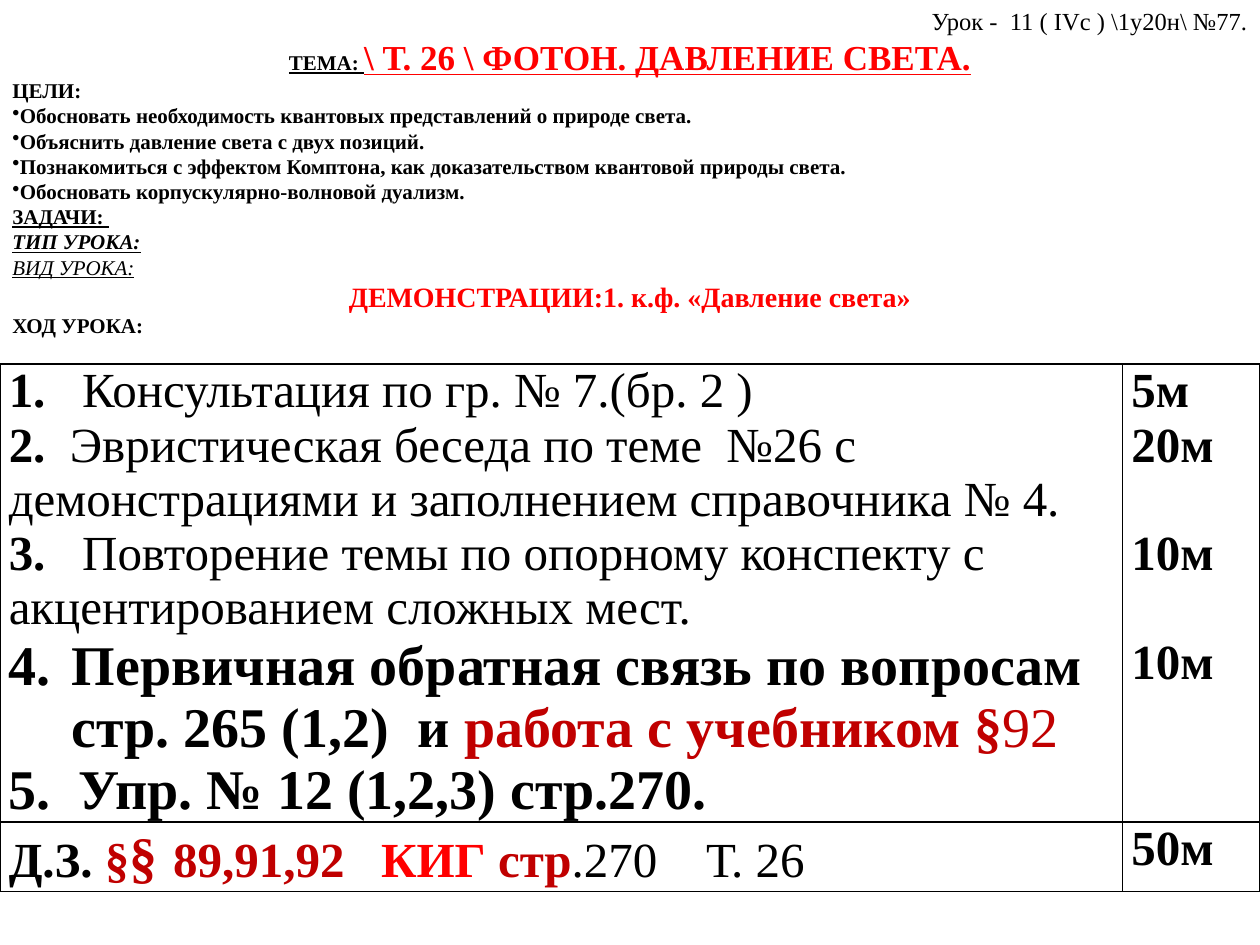
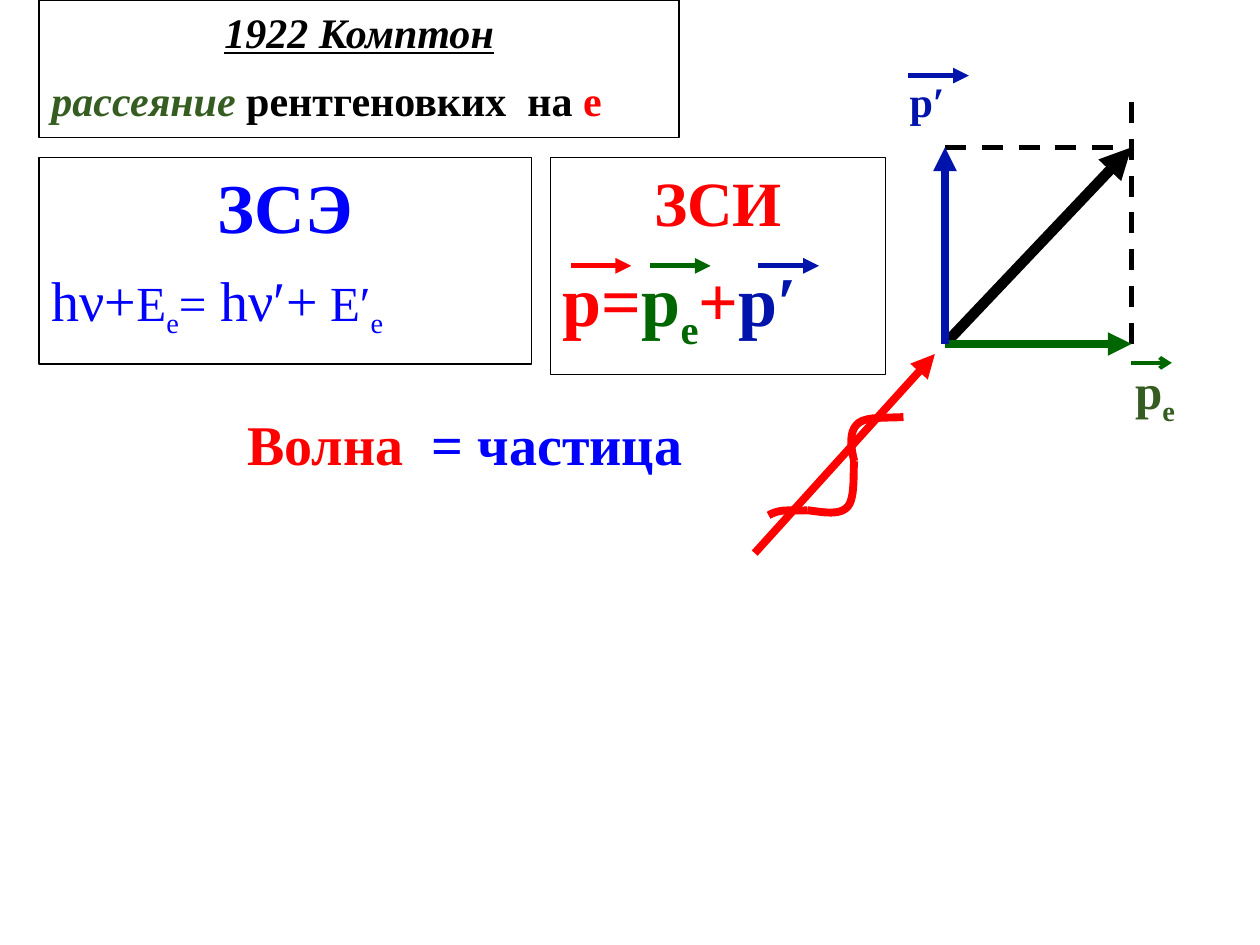
from dataclasses import dataclass
from lxml.etree import SubElement as sub
from pptx import Presentation
from pptx.dml.color import RGBColor as Rgb
from pptx.enum.dml import MSO_LINE
from pptx.enum.shapes import MSO_CONNECTOR as Conn, MSO_SHAPE as Kind
from pptx.enum.text import MSO_ANCHOR as Anchor, PP_ALIGN as Align
from pptx.oxml.ns import qn
from pptx.util import Emu, Inches, Pt

WIDE, HIGH = 10, 7.5
FONT = "Times New Roman"
BLACK, WHITE, RED, DARK = "000000", "FFFFFF", "FF0000", "C00000"
BLUE, NAVY, GREEN, MOSS = "0000FF", "0014AC", "006600", "365D21"
SIDES = dict(l=Align.LEFT, c=Align.CENTER, r=Align.RIGHT)


@dataclass
class Para:
    """Runs are strings, or (text, changes) pairs; style holds letters b, i, u."""
    runs: list
    size: float = 12
    hue: str = BLACK
    style: str = "b"
    side: str = "l"
    before: float = 0
    after: float = 0
    mark: str = ""
    start: int = 0
    hang: float = 0


GOALS = [
    "Обосновать необходимость квантовых представлений о природе света.",
    "Объяснить давление света с двух позиций.",
    "Познакомиться с эффектом Комптона, как доказательством квантовой природы света.",
    "Обосновать корпускулярно-волновой дуализм.",
]
HEAD = [
    Para(["Урок -  11 ( IVс ) \\1у20н\\ №77."], 14, style="", side="r"),
    Para(["ТЕМА: ", ("\\ Т. 26 \\ ФОТОН. ДАВЛЕНИЕ СВЕТА.", dict(size=20, hue=RED))],
         style="bu", side="c"),
    Para(["ЦЕЛИ:"]),
    *[Para([goal], mark="•") for goal in GOALS],
    Para(["ЗАДАЧИ: "], style="bu"),
    Para(["ТИП УРОКА:"], style="biu"),
    Para(["ВИД УРОКА:"], style="iu"),
    Para(["ДЕМОНСТРАЦИИ:1. к.ф. «Давление света»"], 16, RED, side="c"),
    Para(["ХОД УРОКА:"]),
]

STEPS = [
    ("1.   ", "Консультация по гр. № 7.(бр. 2 )"),
    ("2.  ", "Эвристическая беседа по теме  №26 с демонстрациями и заполнением справочника № 4."),
    ("3.   ", "Повторение темы по опорному конспекту с акцентированием сложных мест."),
]
PLAN = [Para([num, (text, dict(style=""))], 28) for num, text in STEPS] + [
    Para(["Первичная обратная связь по вопросам  стр. 265 (1,2)  и ",
          ("работа с учебником §", dict(hue=DARK)),
          ("92", dict(hue=DARK, style=""))], 32, start=4, hang=0.5),
    Para(["5.  Упр. № 12 (1,2,3) стр.270."], 32, hang=0.5),
]
TIMES = [Para([text], 28, before=gap)
         for text, gap in [("5м", 0), ("20м", 0), ("10м", 31), ("10м", 31)]]
HOME = [Para(["Д.З. ", ("§", dict(hue=DARK)), ("§", dict(hue=DARK, size=32)),
              (" ", dict(hue=DARK, size=36)), ("89,91,92   ", dict(hue=DARK)),
              ("КИГ ", dict(hue=RED)), ("стр", dict(hue=DARK)),
              (".270    Т. 26", dict(style=""))], 28)]
TABLE = [[PLAN, TIMES], [HOME, [Para(["50м"], 28)]]]
COLS, ROWS = [8.91, 1.09], [3.63, 0.55]

LOW = dict(sub=True)
BOXES = [
    ((0.31, 0, 5.08, 1.09), [
        Para(["1922 Комптон"], 24, style="biu", side="c", after=10),
        Para([("рассеяние ", dict(hue=MOSS, style="bi")), "рентгеновких  на ",
              ("е", dict(hue=RED))], 24, after=10)]),
    ((0.31, 1.25, 3.91, 1.64), [
        Para(["ЗСЭ"], 40, BLUE, side="c", after=10),
        Para([("hν+", dict(size=32)), "Е", ("е", LOW), "=", (" hν′+", dict(size=32)),
              " Е′", ("е", LOW)], 28, BLUE, "", after=10)]),
    ((4.37, 1.25, 2.66, 1.72), [
        Para(["ЗСИ"], 36, RED, side="c", after=10),
        Para(["р=", ("р", dict(hue=GREEN)), ("е", dict(hue=GREEN, sub=True)), "+",
              ("р′", dict(hue=NAVY))], 40, RED, after=10)]),
]
LABELS = [
    ((8.91, 2.81, 0.69, 0.7), [Para(["р", ("е", LOW)], 28, MOSS, after=10)]),
    ((7.12, 0.55, 0.62, 0.55), [Para(["р′"], 24, NAVY, after=10)]),
    ((1.56, 3.2, 4.26, 0.64), [
        Para(["Волна", ("  = частица", dict(hue=BLUE))], 32, RED, side="c")]),
]

# Momentum diagram: start, end, colour, weight, arrowhead (none means dashed)
FOOT, TOP, EAST = (7.5, 2.73), (7.5, 1.17), (8.98, 2.73)
PEAK = (EAST[0], TOP[1])
LINES = [
    (FOOT, PEAK, BLACK, 6, "triangle"),
    ((EAST[0], 0.81), EAST, BLACK, 3, ""),
    (FOOT, EAST, GREEN, 4.5, "triangle"),
    (TOP, PEAK, BLACK, 3, ""),
    ((5.99, 4.39), (7.42, 2.81), RED, 4.5, "triangle"),
    (FOOT, TOP, NAVY, 4.5, "triangle"),
]
# Vector signs over letters: left, top, length, colour, weight, arrowhead
SIGNS = [
    (8.98, 2.88, 0.32, GREEN, 2.25, "arrow"),
    (7.21, 0.6, 0.48, NAVY, 3, "triangle"),
    (6.02, 2.11, 0.48, NAVY, 3, "triangle"),
    (5.16, 2.11, 0.48, GREEN, 3, "triangle"),
    (4.53, 2.11, 0.48, RED, 3, "triangle"),
]
# Each stroke of the wave is a chain of cubic curves
WAVE = [
    [(6.1, 4.09), (6.2, 4.03), (6.3, 4.06), (6.41, 4.05)],
    [(6.41, 4.05), (6.55, 4.07), (6.67, 4.09), (6.73, 4.02),
     (6.79, 3.95), (6.77, 3.73), (6.78, 3.66)],
    [(6.78, 3.66), (6.75, 3.55), (6.74, 3.43), (6.8, 3.37),
     (6.86, 3.3), (7.05, 3.32), (7.17, 3.31)],
]


def color(hue):
    return Rgb.from_string(hue)


def dress(font, size, hue, style):
    font.name, font.size = FONT, Pt(size)
    font.color.rgb = color(hue)
    font.bold, font.italic, font.underline = (key in style for key in "biu")


def write(frame, paras):
    frame.word_wrap = True
    for k, para in enumerate(paras):
        par = frame.add_paragraph() if k else frame.paragraphs[0]
        par.alignment = SIDES[para.side]
        par.space_before, par.space_after = Pt(para.before), Pt(para.after)
        props = par._p.get_or_add_pPr()
        if para.hang:
            props.set("marL", str(Inches(para.hang)))
            props.set("indent", str(-Inches(para.hang)))
        if para.mark:
            sub(props, qn("a:buChar"), char=para.mark)
        elif para.start:
            sub(props, qn("a:buAutoNum"), type="arabicPeriod", startAt=str(para.start))
        dress(par.font, para.size, para.hue, para.style)
        for item in para.runs:
            text, diff = (item, {}) if isinstance(item, str) else item
            run = par.add_run()
            run.text = text
            if diff:
                dress(run.font, diff.get("size", para.size), diff.get("hue", para.hue),
                      diff.get("style", para.style))
            if diff.get("sub"):
                run._r.get_or_add_rPr().set("baseline", "-25000")


def label(slide, place, paras):
    write(slide.shapes.add_textbox(*map(Inches, place)).text_frame, paras)


def box(slide, place, paras):
    rect = slide.shapes.add_shape(Kind.RECTANGLE, *map(Inches, place))
    rect.shadow.inherit = False
    rect.fill.solid()
    rect.fill.fore_color.rgb = color(WHITE)
    rect.line.color.rgb, rect.line.width = color(BLACK), Pt(0.75)
    rect.text_frame.vertical_anchor = Anchor.TOP
    write(rect.text_frame, paras)


def line(slide, start, end, hue, weight, tip):
    link = slide.shapes.add_connector(Conn.STRAIGHT, *map(Inches, start + end))
    link.line.color.rgb, link.line.width = color(hue), Pt(weight)
    if tip:
        sub(link.line._get_or_add_ln(), qn("a:tailEnd"), type=tip)
    else:
        link.line.dash_style = MSO_LINE.DASH
    sub(link._element.spPr, qn("a:effectLst"))


def curve(dots, steps=12):
    """Points along a chain of cubic curves."""
    path = [dots[0]]
    for k in range(0, len(dots) - 1, 3):
        four = dots[k:k + 4]
        for t in (n / steps for n in range(1, steps + 1)):
            parts = ((1 - t) ** 3, 3 * t * (1 - t) ** 2, 3 * t * t * (1 - t), t ** 3)
            path.append(tuple(sum(w * dot[axis] for w, dot in zip(parts, four))
                              for axis in (0, 1)))
    return path


def stroke(slide, dots):
    path = [(Inches(x), Inches(y)) for x, y in curve(dots)]
    pen = slide.shapes.build_freeform(*path[0])
    pen.add_line_segments(path[1:], close=False)
    wave = pen.convert_to_shape()
    wave.shadow.inherit = False
    wave.fill.background()
    wave.line.color.rgb, wave.line.width = color(RED), Pt(4.5)


def edge(cell):
    """Black one-point border on all four sides."""
    props = cell._tc.get_or_add_tcPr()
    for k, side in enumerate(("lnL", "lnR", "lnT", "lnB")):
        rim = props.makeelement(qn("a:" + side), {"w": str(Pt(1))})
        sub(sub(rim, qn("a:solidFill")), qn("a:srgbClr"), val=BLACK)
        props.insert(k, rim)


def grid(slide, top):
    table = slide.shapes.add_table(len(ROWS), len(COLS), Emu(0), Inches(top),
                                   Inches(sum(COLS)), Inches(sum(ROWS))).table
    table.first_row = table.horz_banding = False
    for col, wide in zip(table.columns, COLS):
        col.width = Inches(wide)
    for row, high, texts in zip(table.rows, ROWS, TABLE):
        row.height = Inches(high)
        for cell, paras in zip(row.cells, texts):
            cell.fill.background()
            cell.margin_left = cell.margin_right = Inches(0.07)
            cell.margin_top = cell.margin_bottom = 0
            write(cell.text_frame, paras)
            edge(cell)


def main():
    deck = Presentation()
    deck.slide_width, deck.slide_height = Inches(WIDE), Inches(HIGH)
    lesson, effect = (deck.slides.add_slide(deck.slide_layouts[6]) for _ in range(2))

    grid(lesson, 2.89)
    label(lesson, (0, 0, WIDE, 2.85), HEAD)

    for place, paras in BOXES:
        box(effect, place, paras)
    for item in LINES:
        line(effect, *item)
    for dots in WAVE:
        stroke(effect, dots)
    for place, paras in LABELS:
        label(effect, place, paras)
    for x, y, size, *look in SIGNS:
        line(effect, (x, y), (x + size, y), *look)

    deck.save("out.pptx")


if __name__ == "__main__":
    main()
